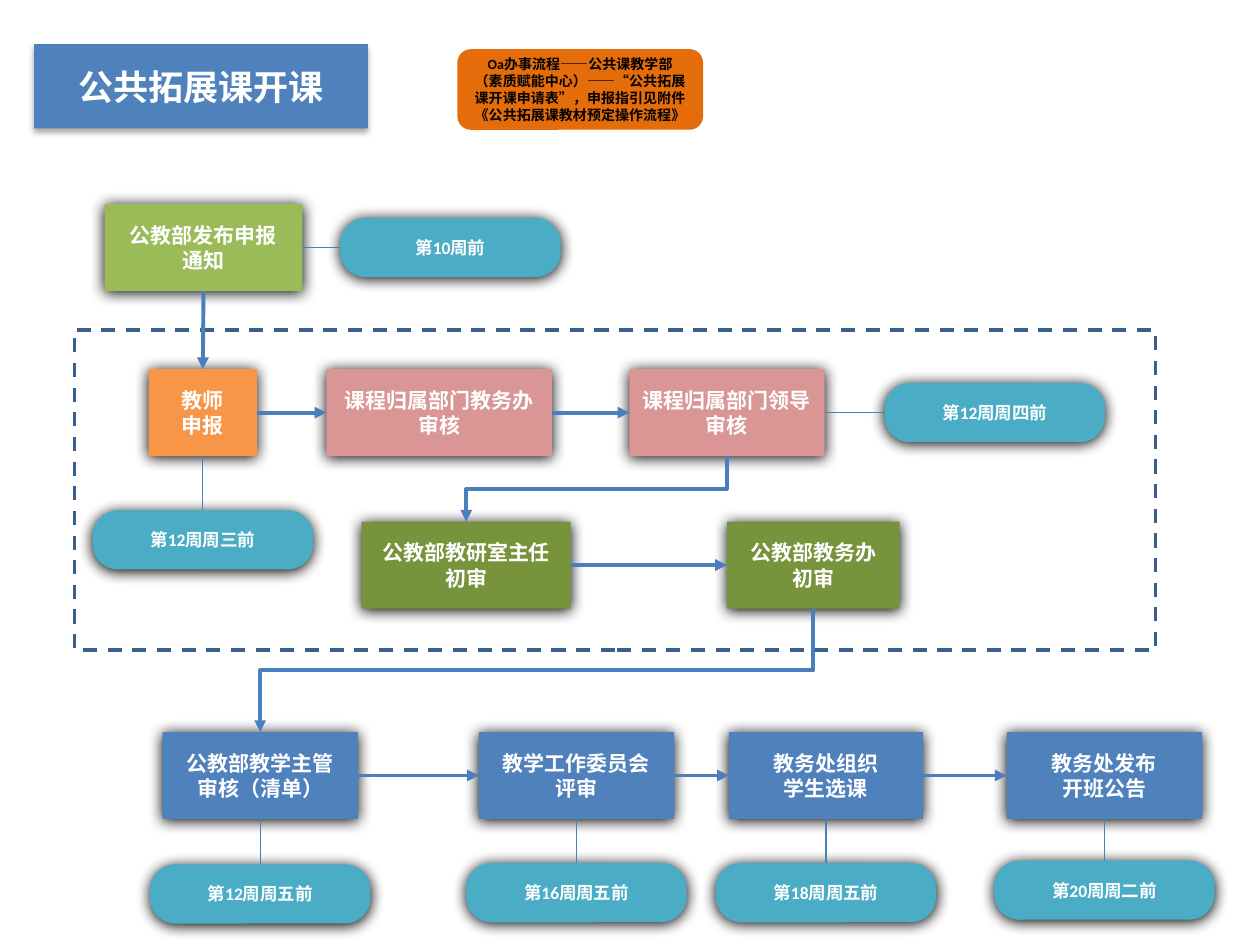
from lxml import etree
from pptx import Presentation
from pptx.dml.color import RGBColor
from pptx.enum.dml import MSO_LINE
from pptx.enum.shapes import MSO_CONNECTOR, MSO_SHAPE
from pptx.enum.text import MSO_ANCHOR, PP_ALIGN
from pptx.oxml.ns import qn
from pptx.util import Inches, Pt

RECT, ROUND = MSO_SHAPE.RECTANGLE, MSO_SHAPE.ROUNDED_RECTANGLE
STRAIGHT, ELBOW = MSO_CONNECTOR.STRAIGHT, MSO_CONNECTOR.ELBOW
DASH = MSO_LINE.DASH
MIDDLE, CENTER = MSO_ANCHOR.MIDDLE, PP_ALIGN.CENTER
TOP, LEFT, BOTTOM, RIGHT = range(4)

WHITE = RGBColor(0xFF, 0xFF, 0xFF)
BLACK = RGBColor(0, 0, 0)
BLUE = RGBColor(0x4F, 0x81, 0xBD)
LIME = RGBColor(0x9B, 0xBB, 0x59)
OLIVE = RGBColor(0x77, 0x93, 0x3C)
ORANGE = RGBColor(0xF7, 0x96, 0x46)
RUST = RGBColor(0xE4, 0x6C, 0x0A)
PINK = RGBColor(0xD9, 0x96, 0x94)
TEAL = RGBColor(0x4B, 0xAC, 0xC6)
LINE = RGBColor(0x4B, 0x7E, 0xBC)
NAVY = RGBColor(0x3A, 0x5F, 0x8C)

# Grid of 100 columns by 75 rows
COLS, ROWS = 100, 75
UNIT = Inches(10) / COLS
STEP_H, TAG_W, TAG_H = 6.9, 17.5, 4.7
GLOW = (8.5, 1, 100)  # blur pt, distance pt, opacity %
SOFT = (3.5, 2.2, 32)


def grid(*cells):
    return [round(cell * UNIT) for cell in cells]


def effect(shape, shade=None):
    """Give the shape an effect list, empty or with a downward shadow."""
    props = shape._element.spPr
    for old in props.findall(qn("a:effectLst")):
        props.remove(old)
    effects = etree.SubElement(props, qn("a:effectLst"))
    if shade:
        blur, dist, alpha = shade
        outer = etree.SubElement(
            effects, qn("a:outerShdw"), blurRad=str(Pt(blur)),
            dist=str(Pt(dist)), dir="5400000", rotWithShape="0")
        black = etree.SubElement(outer, qn("a:srgbClr"), val="000000")
        etree.SubElement(black, qn("a:alpha"), val=str(alpha * 1000))


def write(shape, text, size=12, color=WHITE, bold=True):
    frame = shape.text_frame
    frame.word_wrap = True
    frame.vertical_anchor = MIDDLE
    frame.text = text
    for para in frame.paragraphs:
        para.alignment = CENTER
        font = para.runs[0].font
        font.name, font.size, font.bold = "Calibri", Pt(size), bold
        font.color.rgb = color


def block(slide, kind, box, fill=None, shade=None):
    shape = slide.shapes.add_shape(kind, *grid(*box))
    shape.shadow.inherit = False
    if fill is None:
        shape.fill.background()
    else:
        shape.fill.solid()
        shape.fill.fore_color.rgb = fill
    shape.line.fill.background()
    if shade:
        effect(shape, shade)
    return shape


def step(slide, mid, width, text, fill):
    """Process box around its centre."""
    x, y = mid
    box = (x - width / 2, y - STEP_H / 2, width, STEP_H)
    shape = block(slide, RECT, box, fill, GLOW)
    write(shape, text)
    return shape


def tag(slide, mid, text):
    """Deadline pill around its centre."""
    x, y = mid
    box = (x - TAG_W / 2, y - TAG_H / 2, TAG_W, TAG_H)
    shape = block(slide, ROUND, box, TEAL, GLOW)
    shape.adjustments[0] = 0.43
    write(shape, text, size=10)
    return shape


def link(slide, start, end, sides=(RIGHT, LEFT), kind=STRAIGHT, arrow=True):
    wire = slide.shapes.add_connector(kind, 0, 0, 0, 0)
    wire.begin_connect(start, sides[0])
    wire.end_connect(end, sides[1])
    if kind == ELBOW:
        # Turn a quarter so that it leaves downward and arrives from above
        wide, high = wire.width, wire.height
        x, y = wire.left + wide // 2, wire.top + high // 2
        wire.left, wire.top = x - high // 2, y - wide // 2
        wire.width, wire.height = high, wide
        frame = wire._element.spPr.find(qn("a:xfrm"))
        frame.attrib.pop("flipH", None)
        frame.set("rot", "5400000")
    wire.line.color.rgb = LINE
    wire.line.width = Pt(2.25 if arrow else 0.75)
    if arrow:
        etree.SubElement(wire.line._get_or_add_ln(), qn("a:tailEnd"),
                         type="triangle")
    effect(wire)


def header(slide, box):
    left, top, width, height = box
    title = block(slide, RECT, (left, top, 26.5, height), BLUE, SOFT)
    write(title, "公共拓展课开课", size=20)
    guide = block(slide, ROUND,
                  (left + width - 19.5, top + 0.4, 19.5, height - 0.3), RUST)
    write(guide, "Oa办事流程——公共课教学部（素质赋能中心）——“公共拓展课开课申请表”，"
          "申报指引见附件《公共拓展课教材预定操作流程》", size=8, color=BLACK)


def notice(slide, box):
    left, top, width, height = box
    y = top + height / 2
    first = step(slide, (left + 7.85, y), 15.7, "公教部发布申报\n通知", LIME)
    due = tag(slide, (left + width - TAG_W / 2, y), "第10周前")
    link(slide, first, due, arrow=False)
    return first


def review(slide, box):
    """Dashed frame with two rows of applying and checking."""
    left, top, width, height = box
    frame = block(slide, RECT, box)
    frame.line.color.rgb = NAVY
    frame.line.width = Pt(2)
    frame.line.dash_style = DASH
    high, low = top + 6.55, top + 18.65

    apply = step(slide, (left + 10.2, high), 8.6, "教师\n申报", ORANGE)
    office = step(slide, (left + 28.95, high), 17.9,
                  "课程归属部门教务办\n审核", PINK)
    leader = step(slide, (left + 51.8, high), 15.5,
                  "课程归属部门领导\n审核", PINK)
    head = step(slide, (left + 31.1, low), 16.6,
                "公教部教研室主任\n初审", OLIVE)
    last = step(slide, (left + 58.65, low), 13.7, "公教部教务办\n初审", OLIVE)

    link(slide, apply, office)
    link(slide, office, leader)
    link(slide, leader, head, (BOTTOM, TOP), ELBOW)
    link(slide, head, last)
    due = tag(slide, (left + 10.2, low - 2), "第12周周三前")
    link(slide, apply, due, (BOTTOM, TOP), arrow=False)
    due = tag(slide, (left + 73.05, high), "第12周周四前")
    link(slide, leader, due, arrow=False)
    return apply, last


def finish(slide, box):
    """Last row of steps, each with its deadline below."""
    left, top, width, height = box
    stages = (
        (7.75, 15.5, "公教部教学主管\n审核（清单）", "第12周周五前", 0),
        (32.85, 15.5, "教学工作委员会\n评审", "第16周周五前", 0.1),
        (52.65, 15.4, "教务处组织\n学生选课", "第18周周五前", 0.1),
        (width - 7.75, 15.5, "教务处发布\n开班公告", "第20周周二前", 0.3),
    )
    steps = []
    for x, wide, text, date, lift in stages:
        node = step(slide, (left + x, top + STEP_H / 2), wide, text, BLUE)
        due = tag(slide, (left + x, top + height - TAG_H / 2 - lift), date)
        link(slide, node, due, (BOTTOM, TOP), arrow=False)
        if steps:
            link(slide, steps[-1], node)
        steps.append(node)
    return steps[0]


def main():
    deck = Presentation()
    deck.slide_width, deck.slide_height = grid(COLS, ROWS)
    slide = deck.slides.add_slide(deck.slide_layouts[6])
    header(slide, (2.7, 3.5, 53.1, 6.7))
    first = notice(slide, (8.3, 16.2, 36.2, STEP_H))
    apply, last = review(slide, (5.9, 26.2, 85.8, 25.4))
    final = finish(slide, (12.9, 58.1, 82.5, 15.2))
    # Links between the regions
    link(slide, first, apply, (BOTTOM, TOP))
    link(slide, last, final, (BOTTOM, TOP), ELBOW)
    deck.save("out.pptx")


if __name__ == "__main__":
    main()
